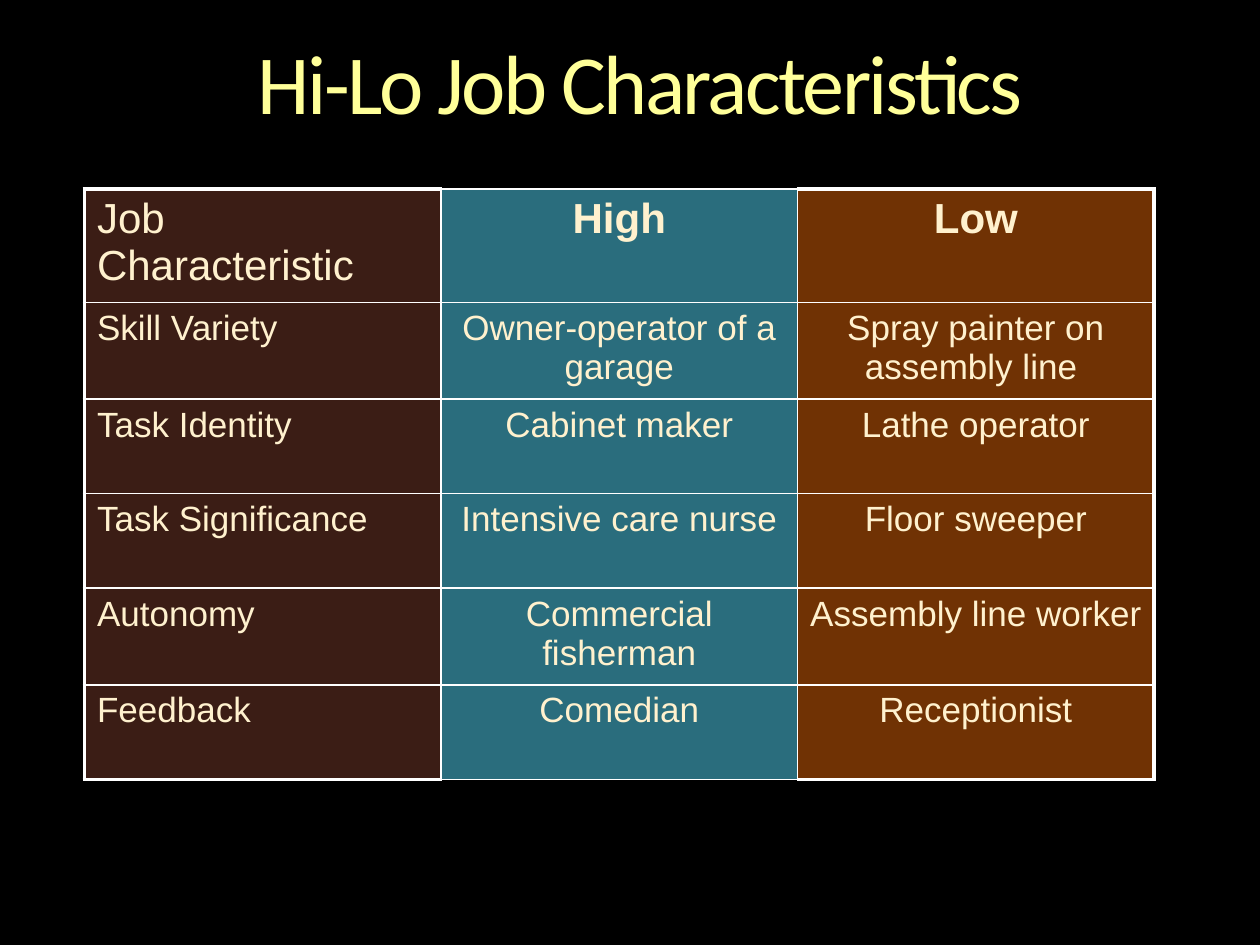
from lxml.etree import SubElement
from pptx import Presentation
from pptx.dml.color import RGBColor
from pptx.enum.text import MSO_ANCHOR, MSO_AUTO_SIZE, PP_ALIGN
from pptx.oxml.ns import qn
from pptx.util import Inches, Pt

COLORS = {
    "background": "000000",
    "title": "FFFF99",
    "text": "FFF1CE",
    "border": "FFFFFF",
}
COLUMN_FILLS = ["3B1D15", "2A6D7D", "703204"]
ROWS = [
    ["Job Characteristic", "High", "Low"],
    ["Skill Variety", "Owner-operator of a garage", "Spray painter on assembly line "],
    ["Task Identity", "Cabinet maker", "Lathe operator"],
    ["Task Significance", "Intensive care nurse", "Floor sweeper"],
    ["Autonomy", "Commercial fisherman", "Assembly line worker"],
    ["Feedback", "Comedian", "Receptionist"],
]


def add_run(paragraph, text, font_name, size, color):
    run = paragraph.add_run()
    run.text = text
    run.font.name = font_name
    run.font.size = Pt(size)
    run.font.color.rgb = RGBColor.from_string(color)
    return run


def set_borders(cell, widths):
    properties = cell._tc.get_or_add_tcPr()
    for index, (side, width) in enumerate(widths.items()):
        line = SubElement(properties, qn(f"a:ln{side}"), w=str(Pt(width)))
        fill = SubElement(line, qn("a:solidFill"))
        SubElement(fill, qn("a:srgbClr"), val=COLORS["border"])
        properties.insert(index, line)


presentation = Presentation()
presentation.slide_width = Inches(10)
presentation.slide_height = Inches(7.5)
slide = presentation.slides.add_slide(presentation.slide_layouts[5])
slide.background.fill.solid()
slide.background.fill.fore_color.rgb = RGBColor.from_string(COLORS["background"])

title = slide.shapes.title
title.left, title.top = Inches(0.83), Inches(0.33)
title.width, title.height = Inches(8.5), Inches(0.58)
frame = title.text_frame
frame.margin_left = frame.margin_right = frame.margin_top = frame.margin_bottom = 0
frame.vertical_anchor = MSO_ANCHOR.TOP
frame.word_wrap = True
frame.auto_size = MSO_AUTO_SIZE.SHAPE_TO_FIT_TEXT
paragraph = frame.paragraphs[0]
paragraph.alignment = PP_ALIGN.CENTER
paragraph.line_spacing = 0.9
run = add_run(paragraph, "Hi-Lo Job Characteristics", "Calibri", 48, COLORS["title"])
run.font._element.set("spc", "-150")

table_frame = slide.shapes.add_table(
    len(ROWS), len(COLUMN_FILLS), Inches(0.67), Inches(1.5), Inches(8.5), Inches(4.6)
)
table = table_frame.table
table.horz_banding = False
for column in table.columns:
    column.width = Inches(2.83)
for row in table.rows:
    row.height = Inches(0.75)
table.rows[0].height = Inches(0.85)

last_row = len(ROWS) - 1
for row_index, texts in enumerate(ROWS):
    for column_index, text in enumerate(texts):
        cell = table.cell(row_index, column_index)
        cell.fill.solid()
        cell.fill.fore_color.rgb = RGBColor.from_string(COLUMN_FILLS[column_index])
        outer_column = column_index != 1
        set_borders(cell, {
            "L": 2.25 if column_index == 0 else 1,
            "R": 2.25 if column_index == 2 else 1,
            "T": 2.25 if outer_column and row_index == 0 else 1,
            "B": 2.25 if outer_column and row_index == last_row else 1,
        })
        paragraph = cell.text_frame.paragraphs[0]
        paragraph.alignment = PP_ALIGN.CENTER if column_index else PP_ALIGN.LEFT
        size = 20 if row_index else 24
        run = add_run(paragraph, text, "Arial", size, COLORS["text"])
        run.font.bold = row_index == 0 and column_index > 0

presentation.save("out.pptx")
